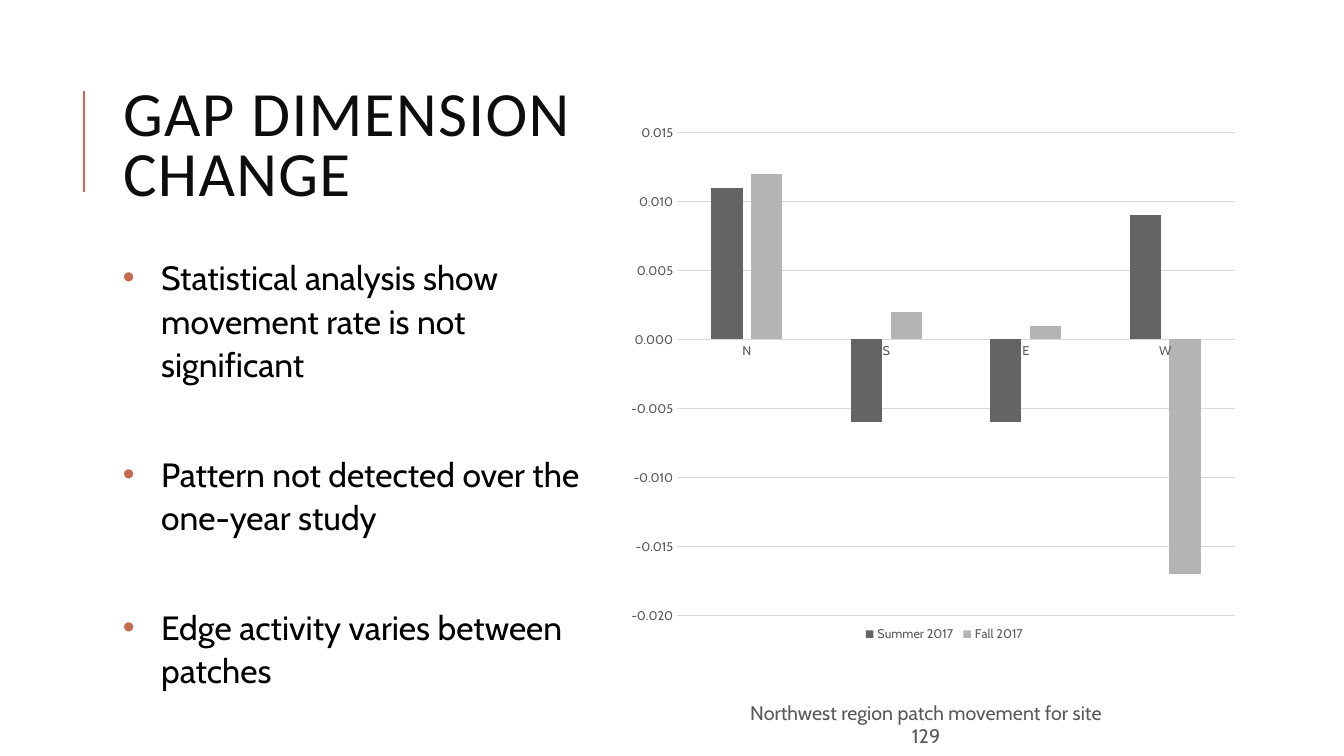
from dataclasses import dataclass

from lxml.etree import SubElement
from pptx import Presentation
from pptx.chart.data import CategoryChartData
from pptx.dml.color import RGBColor
from pptx.enum.chart import XL_CHART_TYPE as ChartType, XL_LEGEND_POSITION as LegendPosition, XL_TICK_MARK as TickMark
from pptx.enum.shapes import MSO_CONNECTOR as Connector
from pptx.enum.text import MSO_ANCHOR as Anchor, MSO_AUTO_SIZE as AutoSize, PP_ALIGN as Align
from pptx.oxml import parse_xml
from pptx.oxml.ns import nsdecls, qn
from pptx.util import Inches, Pt


@dataclass(frozen=True)
class Theme:
    accent: str = "C66951"
    heading: str = "0D0D0D"
    body: str = "000000"
    muted: str = "595959"
    grid: str = "D9D9D9"
    series: tuple = ("646464", "B4B4B4")
    heading_font: str = "Calibri"
    body_font: str = "Cabin"
    heading_size: int = 45
    body_size: int = 24
    caption_size: int = 14
    chart_size: int = 9


def apply(target, formats):
    for name, value in formats.items():
        setattr(target, name, value)


def style_font(font, name, size, color):
    apply(font, {"name": name, "size": Pt(size)})
    font.color.rgb = RGBColor.from_string(color)


def style_line(line, color, width):
    line.color.rgb = RGBColor.from_string(color)
    line.width = Pt(width)


def manual_layout(box, target=""):
    """Build a chart layout from left, top, width and height as fractions."""
    modes = '<c:xMode val="edge"/><c:yMode val="edge"/>'
    sizes = "".join(f'<c:{key} val="{value}"/>' for key, value in zip("xywh", box))
    return parse_xml(f'<c:layout {nsdecls("c")}><c:manualLayout>{target}{modes}{sizes}'
                     "</c:manualLayout></c:layout>")


class SlideBuilder:
    def __init__(self, slide, theme):
        self.slide = slide
        self.theme = theme

    def rule(self, x, top, bottom):
        line = self.slide.shapes.add_connector(
            Connector.STRAIGHT, Inches(x), Inches(bottom), Inches(x), Inches(top))
        style_line(line.line, self.theme.accent, 1.5)
        SubElement(line._element.spPr, qn("a:effectLst"))

    def title(self, text, left, top, width, height):
        heading = self.slide.shapes.title
        apply(heading, {"left": Inches(left), "top": Inches(top),
                        "width": Inches(width), "height": Inches(height)})
        frame = heading.text_frame
        apply(frame, {"text": text, "word_wrap": True, "auto_size": AutoSize.NONE,
                      "vertical_anchor": Anchor.MIDDLE})
        paragraph = frame.paragraphs[0]
        apply(paragraph, {"alignment": Align.LEFT, "line_spacing": 0.8})
        run = paragraph.runs[0]
        style_font(run.font, self.theme.heading_font, self.theme.heading_size, self.theme.heading)
        run._r.get_or_add_rPr().set("spc", "100")

    def text(self, paragraphs, box, size, color, formats):
        """Add a text box and return its paragraphs."""
        frame = self.slide.shapes.add_textbox(*map(Inches, box)).text_frame
        frame.word_wrap = True
        for index, content in enumerate(paragraphs):
            paragraph = frame.add_paragraph() if index else frame.paragraphs[0]
            run = paragraph.add_run()
            run.text = content
            style_font(run.font, self.theme.body_font, size, color)
            apply(paragraph, formats)
        return frame.paragraphs

    def bullets(self, points, box):
        formats = {"line_spacing": 1.08, "space_before": Pt(45), "space_after": Pt(2)}
        paragraphs = self.text(points, box, self.theme.body_size, self.theme.body, formats)
        paragraphs[0].space_before = Pt(6)
        for paragraph in paragraphs:
            properties = paragraph._p.get_or_add_pPr()
            properties.set("marL", str(Inches(0.38)))
            properties.set("indent", str(-Inches(0.38)))
            color = SubElement(properties, qn("a:buClr"))
            SubElement(color, qn("a:srgbClr"), val=self.theme.accent)
            SubElement(properties, qn("a:buFont"), typeface="Arial")
            SubElement(properties, qn("a:buChar"), char="•")

    def caption(self, text, box):
        self.text([text], box, self.theme.caption_size, self.theme.muted, {"alignment": Align.CENTER})

    def column_chart(self, categories, series, box, scale, plot_box, legend_box):
        data = CategoryChartData(number_format="0.000")
        data.categories = categories
        for name, values in series.items():
            data.add_series(name, values)
        chart = self.slide.shapes.add_chart(
            ChartType.COLUMN_CLUSTERED, *map(Inches, box), data).chart
        apply(chart, {"has_title": False, "has_legend": True})
        apply(chart.legend, {"position": LegendPosition.BOTTOM, "include_in_layout": False})

        columns = chart.plots[0]
        apply(columns, {"gap_width": 219, "overlap": -27, "vary_by_categories": False})
        for column, color in zip(columns.series, self.theme.series):
            column.invert_if_negative = False
            column.format.fill.solid()
            column.format.fill.fore_color.rgb = RGBColor.from_string(color)

        category_axis, value_axis = chart.category_axis, chart.value_axis
        for axis in (category_axis, value_axis):
            apply(axis, {"major_tick_mark": TickMark.NONE, "minor_tick_mark": TickMark.NONE})
        for font in (chart.font, chart.legend.font,
                     category_axis.tick_labels.font, value_axis.tick_labels.font):
            style_font(font, self.theme.body_font, self.theme.chart_size, self.theme.muted)
        apply(value_axis, dict(scale, has_major_gridlines=True))
        apply(value_axis.tick_labels, {"number_format": "0.000", "number_format_is_linked": False})
        value_axis.format.line.fill.background()
        for line in (category_axis.format.line, value_axis.major_gridlines.format.line):
            style_line(line, self.theme.grid, 0.75)
        self.place_chart_parts(chart, plot_box, legend_box)

    def place_chart_parts(self, chart, plot_box, legend_box):
        plot_area = chart._chartSpace.find(".//" + qn("c:plotArea"))
        legend = chart._chartSpace.find(".//" + qn("c:legend"))
        for part in (plot_area, legend):
            for automatic in part.findall(qn("c:layout")):
                part.remove(automatic)
        plot_area.insert(0, manual_layout(plot_box, '<c:layoutTarget val="inner"/>'))
        legend.find(qn("c:legendPos")).addnext(manual_layout(legend_box))


def main():
    deck = Presentation()
    apply(deck, {"slide_width": Inches(13.33), "slide_height": Inches(7.5)})
    title_only = deck.slide_layouts[5]
    builder = SlideBuilder(deck.slides.add_slide(title_only), Theme())

    builder.rule(0.83, 0.9, 1.9)
    builder.title("GAP DIMENSION CHANGE", 1.12, 0.52, 4.8, 1.9)
    builder.column_chart(
        categories=["N", "S", "E", "W"],
        series={"Summer 2017": [0.011, -0.006, -0.006, 0.009],
                "Fall 2017": [0.012, 0.002, 0.001, -0.017]},
        box=(6.25, 0.9, 6.21, 5.67),
        scale={"minimum_scale": -0.02, "maximum_scale": 0.015, "major_unit": 0.005},
        plot_box=(0.075, 0.073, 0.891, 0.845),
        legend_box=(0.367, 0.931, 0.27, 0.04))
    builder.bullets(["Statistical analysis show movement rate is not significant",
                     "Pattern not detected over the one-year study",
                     "Edge activity varies between patches"], (1.12, 2.47, 4.8, 4.11))
    builder.caption("Northwest region patch movement for site 129", (7.27, 6.9, 3.83, 0.34))
    deck.save("out.pptx")


if __name__ == "__main__":
    main()
